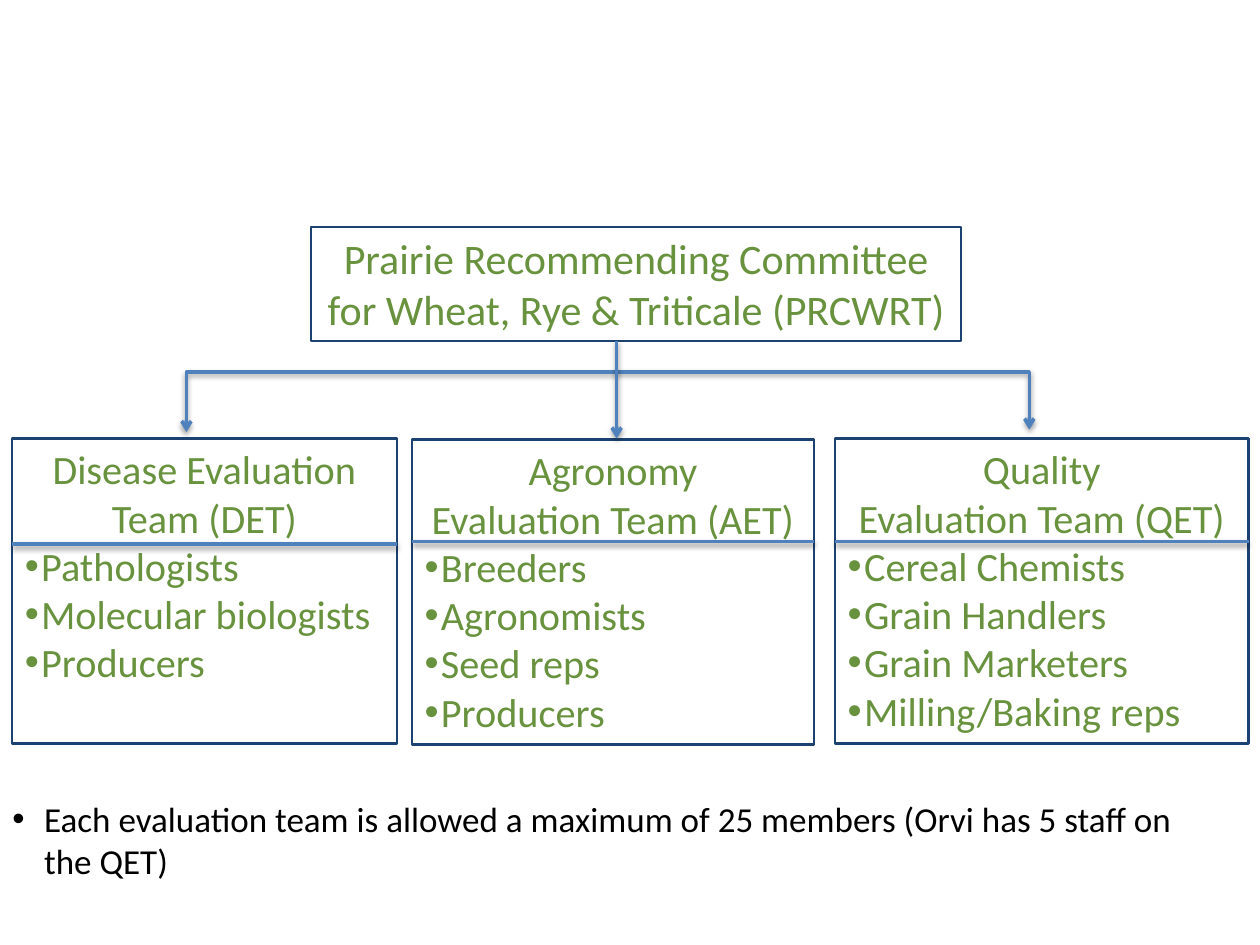
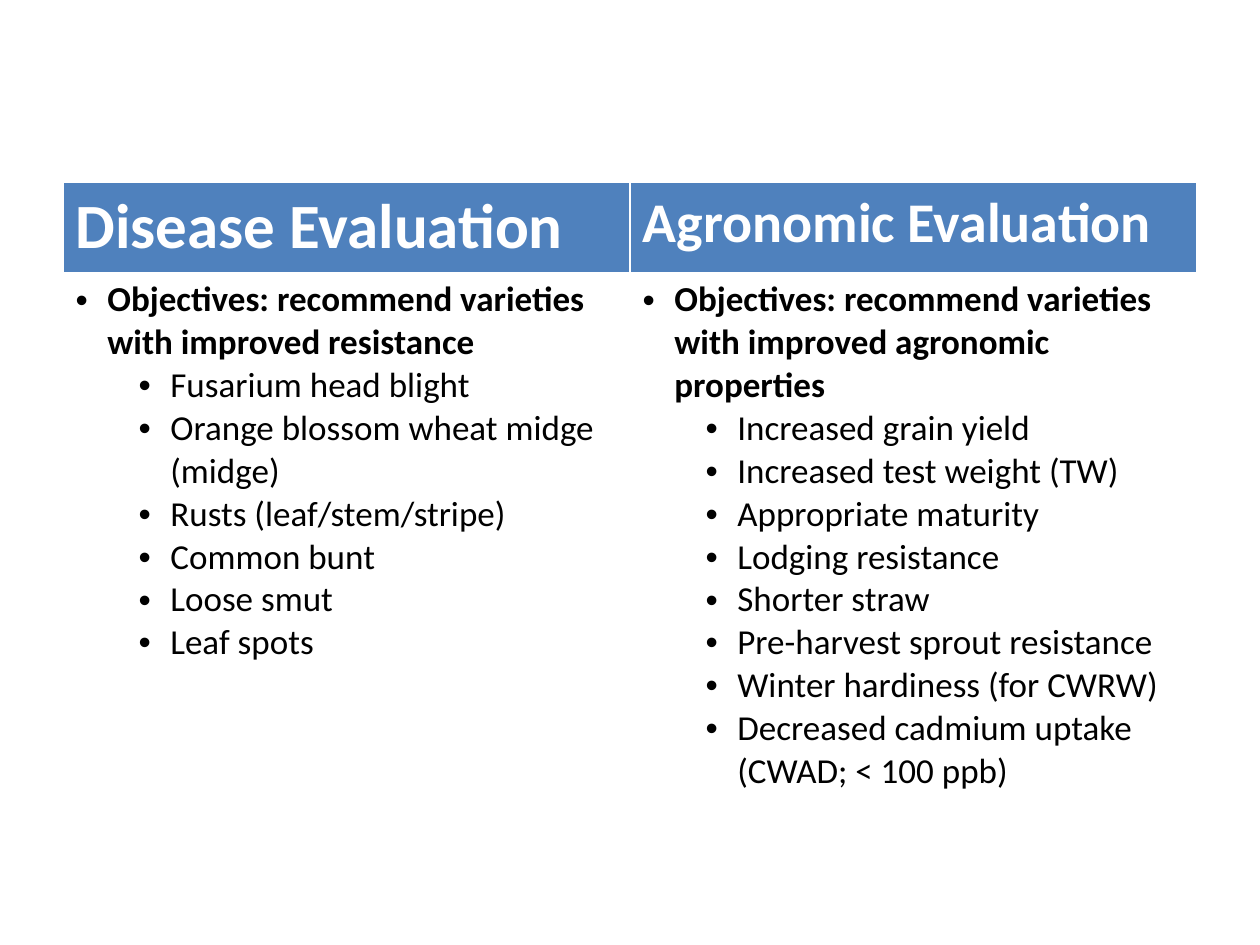
from dataclasses import dataclass

import lxml.etree
import pptx
import pptx.dml.color
import pptx.enum.shapes
import pptx.enum.text
import pptx.oxml.ns
import pptx.util

Cm = pptx.util.Cm
Pt = pptx.util.Pt
qn = pptx.oxml.ns.qn
RGB = pptx.dml.color.RGBColor.from_string
CENTER = pptx.enum.text.PP_ALIGN.CENTER
CONNECTOR = pptx.enum.shapes.MSO_CONNECTOR


@dataclass(frozen=True)
class Theme:
    font: str = "Calibri"
    green: str = "68923E"
    navy: str = "1C4271"
    blue: str = "4F81BD"
    black: str = "000000"
    white: str = "FFFFFF"
    committee_size: float = 24
    team_size: float = 23
    body_size: float = 20
    box_line: float = 1.25
    arrow_line: float = 2


THEME = Theme()

COMMITTEE = "Prairie Recommending Committee for Wheat, Rye & Triticale (PRCWRT)"
NOTE = "Each evaluation team is allowed a maximum of 25 members (Orvi has 5 staff on the QET)"

# left, top, width, divider height, heading lines, members
TEAMS = [
    (0.25, 8.84, 7.75, 10.97, ["Disease Evaluation Team (DET)"],
     ["Pathologists", "Molecular biologists", "Producers"]),
    (8.31, 8.86, 8.1, 10.92, ["Agronomy", "Evaluation Team (AET)"],
     ["Breeders", "Agronomists", "Seed reps", "Producers"]),
    (16.84, 8.84, 8.33, 10.92, ["Quality", "Evaluation Team (QET)"],
     ["Cereal Chemists", "Grain Handlers", "Grain Marketers", "Milling/Baking reps"]),
]
TEAM_HEIGHT = 6.15

# heading, heading size, objective, targets
EVALUATIONS = [
    ("Disease Evaluation", 36,
     "Objectives: recommend varieties with improved resistance",
     ["Fusarium head blight", "Orange blossom wheat midge (midge)",
      "Rusts (leaf/stem/stripe)", "Common bunt", "Loose smut", "Leaf spots"]),
    ("Agronomic Evaluation", 32,
     "Objectives: recommend varieties with improved agronomic properties",
     ["Increased grain yield", "Increased test weight (TW)", "Appropriate maturity",
      "Lodging resistance", "Shorter straw", "Pre-harvest sprout resistance",
      "Winter hardiness (for CWRW)", "Decreased cadmium uptake (CWAD; < 100 ppb)"]),
]


def add_paragraph(tf, text, size, color, bold=False, align=None):
    """Fill the empty first paragraph, or append one."""
    p = tf.paragraphs[0] if not tf.text else tf.add_paragraph()
    p.text = text
    p.alignment = align
    for r in p.runs:
        r.font.name = THEME.font
        r.font.size = Pt(size)
        r.font.bold = bold
        r.font.color.rgb = RGB(color)
    return p


def add_bullet(tf, text, size, color, margin, hang, bold=False, level=0):
    p = add_paragraph(tf, text, size, color, bold)
    p.level = level
    pPr = p._p.get_or_add_pPr()
    pPr.set("marL", str(Cm(margin)))
    pPr.set("indent", str(-Cm(hang)))
    lxml.etree.SubElement(pPr, qn("a:buFont"), typeface="Arial")
    lxml.etree.SubElement(pPr, qn("a:buChar"), char="•")


def add_box(slide, left, top, width, height):
    """Add an outlined rectangle and return its text frame."""
    rectangle = pptx.enum.shapes.MSO_SHAPE.RECTANGLE
    sp = slide.shapes.add_shape(rectangle, Cm(left), Cm(top), Cm(width), Cm(height))
    sp.shadow.inherit = False
    sp.fill.background()
    sp.line.color.rgb = RGB(THEME.navy)
    sp.line.width = Pt(THEME.box_line)
    tf = sp.text_frame
    tf.word_wrap = True
    tf.vertical_anchor = pptx.enum.text.MSO_ANCHOR.TOP
    for p in tf.paragraphs:
        p.alignment = pptx.enum.text.PP_ALIGN.LEFT
    return tf


def add_line(slide, x1, y1, x2, y2, kind=CONNECTOR.STRAIGHT, arrow=False):
    cxn = slide.shapes.add_connector(kind, Cm(x1), Cm(y1), Cm(x2), Cm(y2))
    cxn.line.color.rgb = RGB(THEME.blue)
    cxn.line.width = Pt(THEME.arrow_line)
    spPr = cxn._element.spPr
    if arrow:
        lxml.etree.SubElement(spPr.find(qn("a:ln")), qn("a:tailEnd"), type="arrow")
    effects = lxml.etree.SubElement(spPr, qn("a:effectLst"))
    shadow = lxml.etree.SubElement(
        effects, qn("a:outerShdw"), blurRad=str(Pt(3.1)), dist=str(Pt(1.6)),
        dir="5400000", rotWithShape="0")
    color = lxml.etree.SubElement(shadow, qn("a:srgbClr"), val=THEME.black)
    lxml.etree.SubElement(color, qn("a:alpha"), val="38000")
    return cxn


def add_branch(slide, x1, y1, x2, y2):
    """Add an arrow that runs sideways, then turns down once."""
    cxn = add_line(slide, x1, y1, x2, y2, CONNECTOR.ELBOW, arrow=True)
    cxn._element.spPr.find(qn("a:prstGeom")).set("prst", "bentConnector2")


def add_team(slide, left, top, width, heading, members):
    tf = add_box(slide, left, top, width, TEAM_HEIGHT)
    for line in heading:
        add_paragraph(tf, line, THEME.team_size, THEME.green, align=CENTER)
    for member in members:
        add_bullet(tf, member, THEME.team_size, THEME.green, 0.33, 0.33)


def add_note(slide, text):
    sp = slide.shapes.add_textbox(Cm(0), Cm(15.95), Cm(24.92), Cm(1.96))
    sp.text_frame.word_wrap = True
    add_bullet(sp.text_frame, text, THEME.body_size, THEME.black, 0.64, 0.64)


def fill_cell(cell, color):
    cell.fill.solid()
    cell.fill.fore_color.rgb = RGB(color)
    return cell.text_frame


def add_evaluation_table(slide):
    frame = slide.shapes.add_table(2, len(EVALUATIONS), Cm(1.27), Cm(3.68),
                                   Cm(22.86), Cm(12.78))
    table = frame.table
    table.horz_banding = False
    table.rows[0].height = Cm(1.75)
    table.rows[1].height = Cm(11.03)
    for col, (heading, size, objective, targets) in enumerate(EVALUATIONS):
        tf = fill_cell(table.cell(0, col), THEME.blue)
        add_paragraph(tf, heading, size, THEME.white, bold=True)
        tf = fill_cell(table.cell(1, col), THEME.white)
        add_bullet(tf, objective, THEME.body_size, THEME.black, 0.64, 0.64, bold=True)
        for target in targets:
            add_bullet(tf, target, THEME.body_size, THEME.black, 1.91, 0.64, level=1)


def build_committee_slide(slide):
    tf = add_box(slide, 6.27, 4.57, 13.11, 2.31)
    add_paragraph(tf, COMMITTEE, THEME.committee_size, THEME.green, align=CENTER)
    for left, top, width, _, heading, members in TEAMS:
        add_team(slide, left, top, width, heading, members)
    stem_x, branch_y = 12.43, 7.5
    for tip_x, tip_y in ((3.76, 8.71), (20.75, 8.66)):
        add_branch(slide, stem_x, branch_y, tip_x, tip_y)
    add_line(slide, stem_x, 6.87, stem_x, 8.84, arrow=True)
    add_note(slide, NOTE)
    for left, _, width, divider_y, _, _ in TEAMS:
        add_line(slide, left, divider_y, left + width, divider_y)


def main():
    prs = pptx.Presentation()
    prs.slide_width, prs.slide_height = Cm(25.4), Cm(19.05)
    blank = prs.slide_layouts[6]
    build_committee_slide(prs.slides.add_slide(blank))
    add_evaluation_table(prs.slides.add_slide(blank))
    prs.save("out.pptx")


if __name__ == "__main__":
    main()
